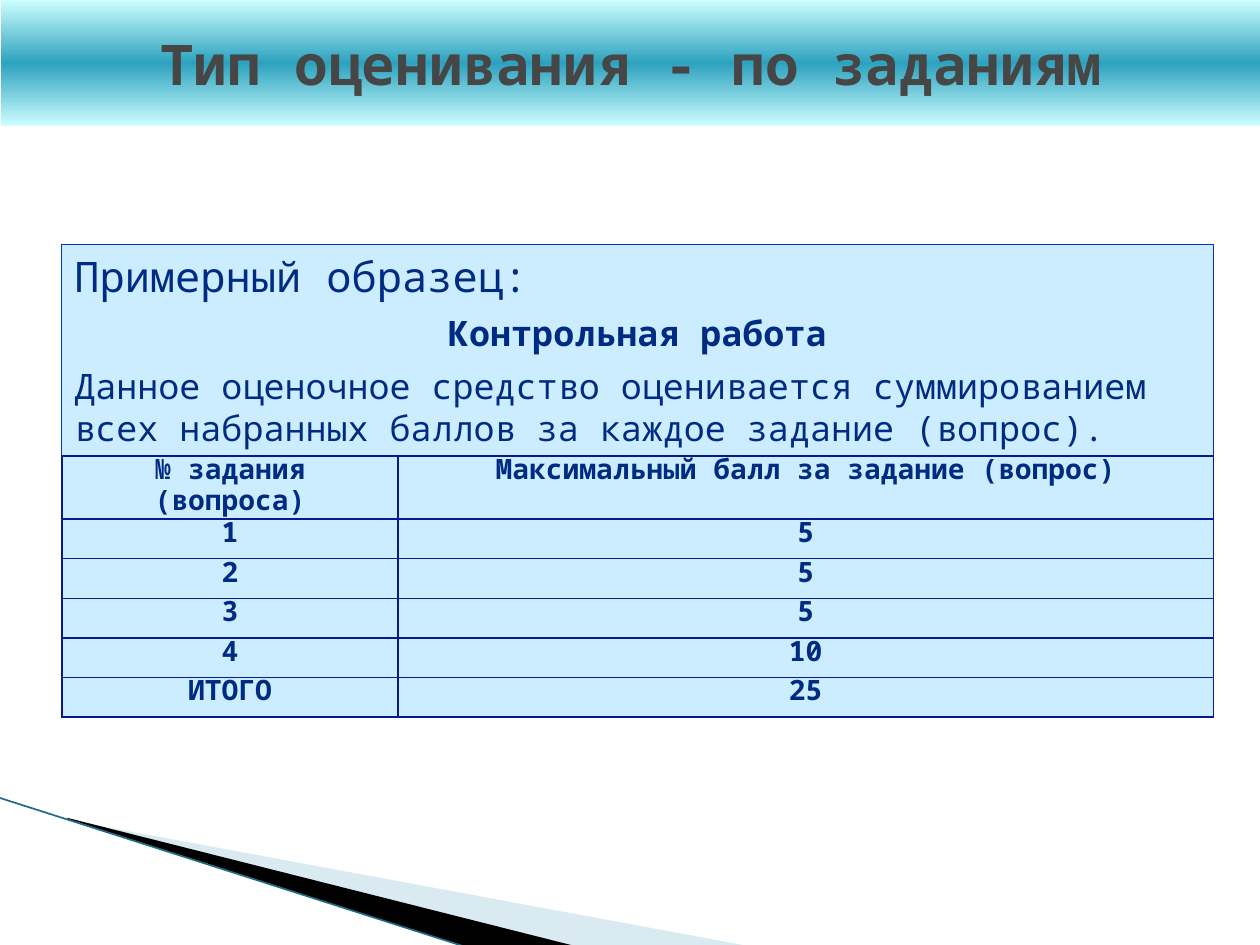
from lxml import etree
from pptx import Presentation
from pptx.dml.color import RGBColor
from pptx.enum import shapes, text
from pptx.oxml import parse_xml
from pptx.oxml.ns import nsdecls, qn
from pptx.util import Inches, Pt

FONT = "Noto Sans Mono"
NAVY = RGBColor(0x00, 0x2B, 0x82)
GREY = RGBColor(0x46, 0x46, 0x46)
PALE_BLUE = RGBColor(0xCC, 0xEC, 0xFF)
PANEL_LINE = RGBColor(0x00, 0x33, 0xCC)
GRID_LINE = RGBColor(0x0A, 0x19, 0x8C)
BAND_EDGE = RGBColor(0xCD, 0xFF, 0xFF)
BAND_MIDDLE = RGBColor(0x2D, 0xA2, 0xBF)
MIST = RGBColor(0xA0, 0xCB, 0xDC)
BLACK = RGBColor(0x00, 0x00, 0x00)
TEAL = RGBColor(0x1B, 0x6E, 0x82)

TABLE_HEIGHT = 2.07
HEADER_HEIGHT = 0.5
INTRO = [
    ("Примерный образец:", 24, False, text.PP_ALIGN.LEFT),
    ("Контрольная работа", 20, True, text.PP_ALIGN.CENTER),
    ("Данное оценочное средство оценивается суммированием всех набранных "
     "баллов за каждое задание (вопрос).", 20, False, text.PP_ALIGN.LEFT),
]
SCORES = [
    ("№ задания (вопроса)", "Максимальный балл за задание (вопрос)"),
    ("1", "5"),
    ("2", "5"),
    ("3", "5"),
    ("4", "10"),
    ("ИТОГО", "25"),
]


def place(shape, left, top, width, height):
    shape.left, shape.top = Inches(left), Inches(top)
    shape.width, shape.height = Inches(width), Inches(height)


def write(para, words, size, bold, align, color=NAVY):
    para.text = words
    para.alignment = align
    font = para.runs[0].font
    font.name, font.size, font.bold = FONT, Pt(size), bold
    font.color.rgb = color


def add_wedge(page, points, color, opacity=100):
    corners = [(Inches(x), Inches(y)) for x, y in points]
    builder = page.shapes.build_freeform(*corners[0])
    builder.add_line_segments(corners[1:], close=True)
    wedge = builder.convert_to_shape()
    wedge.shadow.inherit = False
    wedge.line.fill.background()
    wedge.fill.solid()
    wedge.fill.fore_color.rgb = color
    if opacity < 100:
        tint = wedge._element.spPr.find(".//" + qn("a:srgbClr"))
        etree.SubElement(tint, qn("a:alpha"), val=str(opacity * 1000))


def add_edge_line(page):
    edge = page.shapes.add_connector(
        shapes.MSO_CONNECTOR.STRAIGHT,
        Inches(-0.01), Inches(6.33), Inches(3.71), Inches(7.52))
    edge.line.color.rgb = TEAL
    edge.line.width = Pt(0.95)
    etree.SubElement(edge._element.spPr, qn("a:effectLst"))


def fill_title(title):
    place(title, 0.01, 0, 10, 1)
    stops = "".join(
        f'<a:gs pos="{share * 1000}"><a:srgbClr val="{color}"/></a:gs>'
        for share, color in [(0, BAND_EDGE), (50, BAND_MIDDLE), (100, BAND_EDGE)])
    title._element.spPr.append(parse_xml(
        f'<a:gradFill {nsdecls("a")} rotWithShape="1"><a:gsLst>{stops}</a:gsLst>'
        '<a:lin ang="5400000" scaled="0"/></a:gradFill>'))
    frame = title.text_frame
    frame.vertical_anchor = text.MSO_ANCHOR.MIDDLE
    write(frame.paragraphs[0], "Тип оценивания - по заданиям", 32, True,
          text.PP_ALIGN.CENTER, GREY)


def fill_intro(panel):
    place(panel, 0.49, 1.94, 9.14, 1.68)
    panel.fill.solid()
    panel.fill.fore_color.rgb = PALE_BLUE
    panel.line.color.rgb = PANEL_LINE
    panel.line.width = Pt(0.75)
    frame = panel.text_frame
    frame.auto_size = text.MSO_AUTO_SIZE.NONE
    for index, (words, size, bold, align) in enumerate(INTRO):
        para = frame.add_paragraph() if index else frame.paragraphs[0]
        properties = para._p.get_or_add_pPr()
        properties.set("marL", "0")
        properties.set("indent", "0")
        etree.SubElement(properties, qn("a:buNone"))
        para.space_before, para.space_after = Pt(0), Pt(6)
        write(para, words, size, bold, align)


def format_cell(cell, words):
    cell.margin_left = cell.margin_right = Inches(0.08)
    cell.margin_top = cell.margin_bottom = 0
    properties = cell._tc.get_or_add_tcPr()
    for side in ("lnL", "lnR", "lnT", "lnB"):
        properties.append(parse_xml(
            f'<a:{side} {nsdecls("a")} w="{Pt(1)}"><a:solidFill>'
            f'<a:srgbClr val="{GRID_LINE}"/></a:solidFill></a:{side}>'))
    cell.fill.solid()
    cell.fill.fore_color.rgb = PALE_BLUE
    para = cell.text_frame.paragraphs[0]
    write(para, words, 16, True, text.PP_ALIGN.CENTER)
    para.line_spacing = Pt(18)


def add_score_table(page):
    frame = page.shapes.add_table(
        len(SCORES), 2, Inches(0.49), Inches(3.62), Inches(9.14),
        Inches(TABLE_HEIGHT))
    table = frame.table
    table.first_row = table.horz_banding = False
    for column, width in zip(table.columns, (2.67, 6.47)):
        column.width = Inches(width)
    row_height = (TABLE_HEIGHT - HEADER_HEIGHT) / (len(SCORES) - 1)
    for index, words in enumerate(SCORES):
        table.rows[index].height = Inches(row_height if index else HEADER_HEIGHT)
        for column, label in enumerate(words):
            format_cell(table.cell(index, column), label)


def main():
    deck = Presentation()
    deck.slide_width, deck.slide_height = Inches(10), Inches(7.5)
    page = deck.slides.add_slide(deck.slide_layouts[1])
    fill_title(page.shapes.title)
    fill_intro(page.placeholders[1])
    add_wedge(page, [(0.55, 6.51), (5.95, 7.51), (4.56, 7.51), (0.55, 6.5)],
              MIST, opacity=40)
    add_wedge(page, [(0.53, 6.49), (4.57, 7.51), (3.72, 7.52), (0.54, 6.5)],
              BLACK)
    add_edge_line(page)
    add_score_table(page)
    deck.save("out.pptx")


if __name__ == "__main__":
    main()
